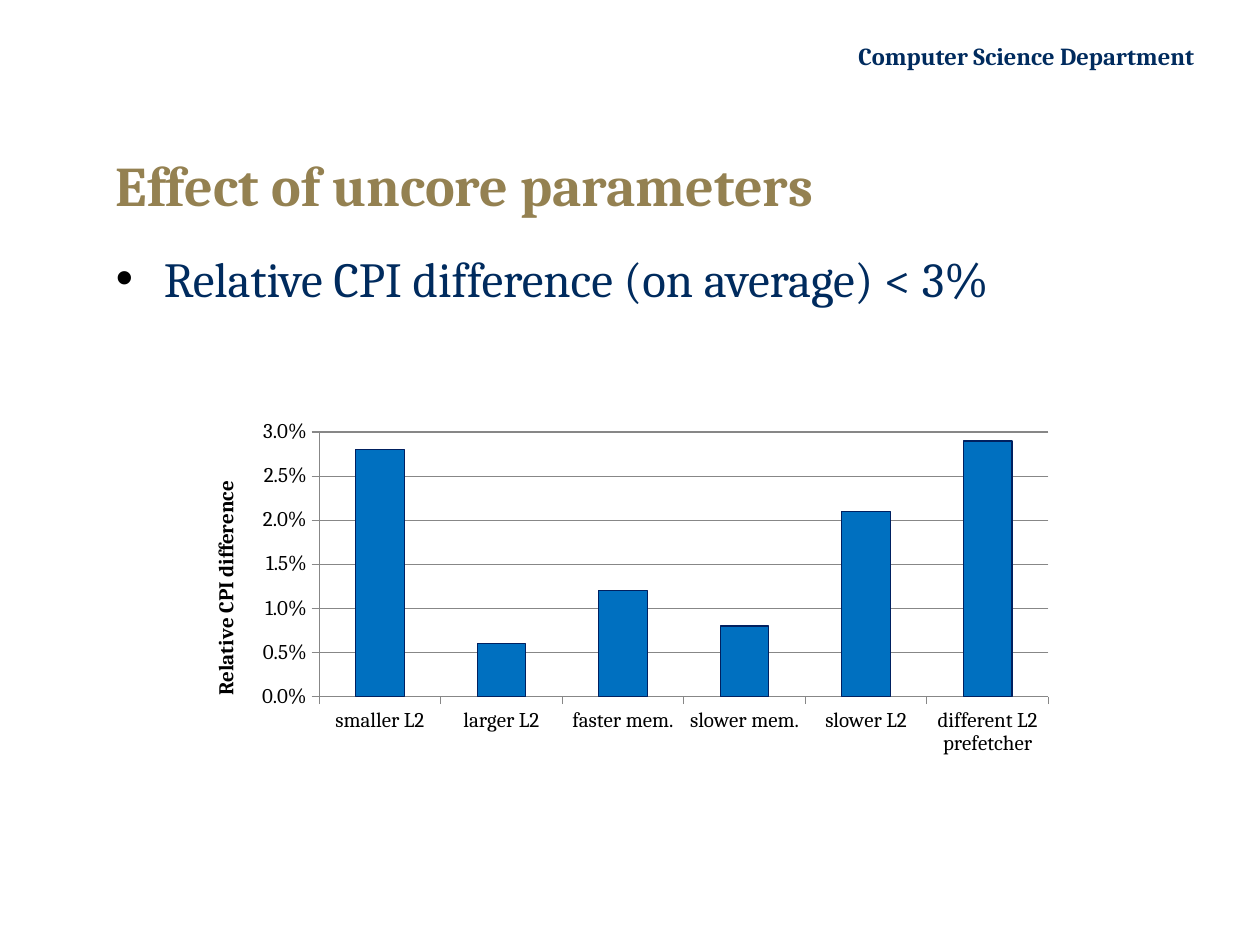
from lxml import etree
from pptx import Presentation
from pptx.chart.data import CategoryChartData as ChartData
from pptx.dml.color import RGBColor
from pptx.enum.chart import XL_CHART_TYPE as Chart, XL_TICK_MARK as Tick
from pptx.enum.text import MSO_ANCHOR as Anchor, MSO_AUTO_SIZE as Fit, PP_ALIGN as Align
from pptx.oxml import parse_xml
from pptx.oxml.ns import nsdecls, qn
from pptx.util import Inches, Pt

FONT = "Cambria"
NAVY, GOLD, BLACK, GRAY = "002B5E", "948151", "000000", "878787"
BARS = {
    "smaller L2": 0.028,
    "larger L2": 0.006,
    "faster mem.": 0.012,
    "slower mem.": 0.008,
    "slower L2": 0.021,
    "different L2 prefetcher": 0.029,
}


def color(code):
    return RGBColor.from_string(code)


def style(font, size, code, bold=False):
    font.name, font.size, font.bold = FONT, Pt(size), bold
    font.color.rgb = color(code)


def place(shape, left, top, width, height):
    shape.left, shape.top = Inches(left), Inches(top)
    shape.width, shape.height = Inches(width), Inches(height)


def write(shape, text, size, code, bold=False, align=Align.LEFT, anchor=Anchor.TOP):
    frame = shape.text_frame
    frame.word_wrap, frame.auto_size = True, Fit.NONE
    frame.vertical_anchor = anchor
    para = frame.paragraphs[0]
    para.text, para.alignment = text, align
    style(para.font, size, code, bold)
    return para


def bullet(para, code, indent):
    props = para._p.get_or_add_pPr()
    props.set("marL", str(Inches(indent)))
    props.set("indent", str(Inches(-indent)))
    marks = (
        f'<a:buClr {nsdecls("a")}><a:srgbClr val="{code}"/></a:buClr>',
        f'<a:buFont {nsdecls("a")} typeface="Arial"/>',
        f'<a:buChar {nsdecls("a")} char="•"/>',
    )
    for spot, mark in enumerate(marks):
        props.insert(spot, parse_xml(mark))
    para.space_before, para.space_after = Pt(0), Pt(6)


def fix_plot(chart, x, y, w, h):
    """Pin the inner plot area, in fractions of the chart."""
    area = chart._chartSpace.chart.plotArea
    for old in area.findall(qn("c:layout")):
        area.remove(old)
    layout = etree.Element(qn("c:layout"))
    manual = etree.SubElement(layout, qn("c:manualLayout"))
    rules = dict(layoutTarget="inner", xMode="edge", yMode="edge", x=x, y=y, w=w, h=h)
    for name, value in rules.items():
        etree.SubElement(manual, qn(f"c:{name}")).set("val", str(value))
    area.insert(0, layout)


def draw_line(line, code, width=0.75):
    line.color.rgb, line.width = color(code), Pt(width)


def add_bars(slide, bars, box):
    data = ChartData(number_format="0.0%")
    data.categories = list(bars)
    data.add_series("Series 1", list(bars.values()))
    frame = slide.shapes.add_chart(Chart.COLUMN_CLUSTERED, *map(Inches, box), data)
    chart = frame.chart
    chart.has_legend = chart.has_title = False
    style(chart.font, 12, BLACK)

    plot = chart.plots[0]
    plot.gap_width, plot.vary_by_categories = 150, False
    bar = plot.series[0].format
    bar.fill.solid()
    bar.fill.fore_color.rgb = color("0070C0")
    draw_line(bar.line, "002060")

    for axis in (chart.category_axis, chart.value_axis):
        axis.major_tick_mark, axis.minor_tick_mark = Tick.OUTSIDE, Tick.NONE
        draw_line(axis.format.line, GRAY)
    scale = chart.value_axis
    scale.minimum_scale, scale.maximum_scale, scale.major_unit = 0, 0.03, 0.005
    scale.tick_labels.number_format = "0.0%"
    scale.tick_labels.number_format_is_linked = False
    scale.has_major_gridlines = True
    draw_line(scale.major_gridlines.format.line, GRAY)
    label = scale.axis_title.text_frame.paragraphs[0]
    label.text = "Relative CPI difference"
    style(label.font, 12, BLACK, True)
    fix_plot(chart, 0.14, 0.06, 0.85, 0.7)


def main():
    deck = Presentation()
    deck.slide_width, deck.slide_height = Inches(10), Inches(7.5)
    slide = deck.slides.add_slide(deck.slide_layouts[1])

    head = slide.shapes.add_textbox(*map(Inches, (4.19, 0.28, 5.39, 0.34)))
    write(head, "Computer Science Department", 14, NAVY, True, Align.RIGHT)

    title, body = slide.placeholders
    place(title, 0.82, 1, 8.67, 0.92)
    write(title, "Effect of uncore parameters", 32, GOLD, True, anchor=Anchor.MIDDLE)
    place(body, 0.82, 1.92, 8.67, 4.5)
    point = write(body, "Relative CPI difference (on average) < 3%", 28, NAVY)
    bullet(point, BLACK, 0.38)

    add_bars(slide, BARS, (1.58, 3.25, 6.81, 3))
    deck.save("out.pptx")


if __name__ == "__main__":
    main()
